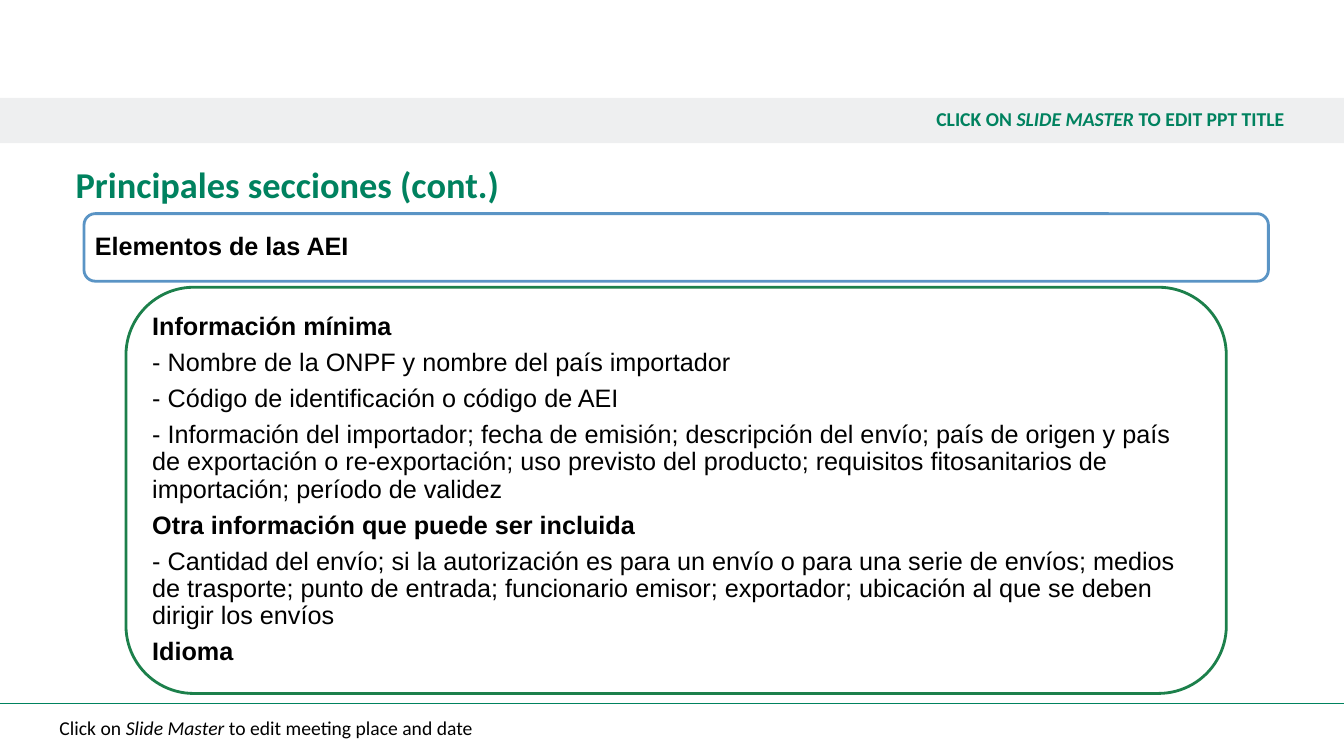
"""Build the slide on the elements of import authorisations."""
from dataclasses import dataclass

from lxml.etree import SubElement
from pptx import Presentation
from pptx.dml.color import RGBColor
from pptx.enum.shapes import MSO_CONNECTOR, MSO_SHAPE
from pptx.enum.text import MSO_ANCHOR, MSO_AUTO_SIZE, PP_ALIGN
from pptx.oxml.ns import qn
from pptx.util import Inches, Pt

COLUMNS, ROWS = 160, 90
CELL = Inches(1) / 12


@dataclass(frozen=True)
class Theme:
    green: str = "00825F"
    frame_green: str = "1C804B"
    frame_blue: str = "5A94C5"
    band: str = "D8D9DC"
    band_alpha: str = "42000"
    white: str = "FFFFFF"
    black: str = "000000"
    heading_font: str = "Calibri"
    body_font: str = "Arial"
    title_size: float = 26
    body_size: float = 18
    small_size: float = 14


@dataclass(frozen=True)
class Area:
    column: float
    row: float
    columns: float
    rows: float

    def lengths(self) -> dict:
        names = ("left", "top", "width", "height")
        cells = (self.column, self.row, self.columns, self.rows)
        return {name: round(count * CELL) for name, count in zip(names, cells)}


@dataclass(frozen=True)
class Span:
    text: str
    bold: bool = False
    italic: bool = False


@dataclass(frozen=True)
class Style:
    font: str
    size: float
    color: str
    inset: tuple
    anchor: MSO_ANCHOR = MSO_ANCHOR.MIDDLE
    align: PP_ALIGN = PP_ALIGN.LEFT
    after: float = 0


@dataclass(frozen=True)
class Frame:
    area: Area
    line: str


THEME = Theme()
STRIP_INSET = (0.59, 0.05)
FOOTER = Style(THEME.heading_font, THEME.small_size, THEME.black, STRIP_INSET)
HEADER = Style(THEME.heading_font, THEME.small_size, THEME.green, STRIP_INSET,
               align=PP_ALIGN.RIGHT)
TITLE = Style(THEME.heading_font, THEME.title_size, THEME.green, (0.17, 0.08),
              anchor=MSO_ANCHOR.TOP)
BODY = Style(THEME.body_font, THEME.body_size, THEME.black, (0.07, 0.07),
             after=0.35 * THEME.body_size)

FRAMES = (
    Frame(Area(10, 25.44, 141, 8.04), THEME.frame_blue),
    Frame(Area(15, 34.2, 131, 48.36), THEME.frame_green),
)
FOOTER_TEXT = [[Span("Click on "), Span("Slide Master ", italic=True),
                Span("to edit meeting place and date")]]
HEADER_TEXT = [[Span("CLICK ON ", True), Span("SLIDE MASTER ", True, True),
                Span("TO EDIT PPT TITLE", True)]]
TITLE_TEXT = [[Span("Principales secciones (cont.)", True)]]
SECTION_TEXT = [[Span("Elementos de las AEI", True)]]
BODY_TEXT = [
    [Span("Información mínima", True)],
    [Span("- Nombre de la ONPF y nombre del país importador")],
    [Span("- Código de identificación o código de AEI")],
    [Span("- Información del importador; fecha de emisión; descripción del envío; "
          "país de origen y país de exportación o re-exportación; uso previsto del "
          "producto; requisitos fitosanitarios de importación; período de validez")],
    [Span("Otra información que puede ser incluida", True)],
    [Span("- Cantidad del envío; si la autorización es para un envío o para una "
          "serie de envíos; medios de trasporte; punto de entrada; funcionario "
          "emisor; exportador; ubicación al que se deben dirigir los envíos")],
    [Span("Idioma", True)],
]


def assign(target, values: dict) -> None:
    for name, value in values.items():
        setattr(target, name, value)


def write(box, paragraphs: list, style: Style) -> None:
    frame = box.text_frame
    across, down = (Inches(inset) for inset in style.inset)
    assign(frame, {"word_wrap": True, "auto_size": MSO_AUTO_SIZE.NONE,
                   "vertical_anchor": style.anchor,
                   "margin_left": across, "margin_right": across,
                   "margin_top": down, "margin_bottom": down})
    for index, spans in enumerate(paragraphs):
        para = frame.add_paragraph() if index else frame.paragraphs[0]
        assign(para, {"alignment": style.align, "line_spacing": 0.9,
                      "space_before": Pt(0), "space_after": Pt(style.after)})
        for span in spans:
            run = para.add_run()
            run.text = span.text
            assign(run.font, {"name": style.font, "size": Pt(style.size),
                              "bold": span.bold, "italic": span.italic})
            run.font.color.rgb = RGBColor.from_string(style.color)


def add_panel(page, kind: MSO_SHAPE, area: Area, fill: str):
    panel = page.shapes.add_shape(kind, **area.lengths())
    panel.shadow.inherit = False
    panel.fill.solid()
    panel.fill.fore_color.rgb = RGBColor.from_string(fill)
    panel.line.fill.background()
    return panel


def add_text(page, area: Area, paragraphs: list, style: Style) -> None:
    write(page.shapes.add_textbox(**area.lengths()), paragraphs, style)


def fill_placeholder(holder, area: Area, paragraphs: list, style: Style) -> None:
    holder.element.getparent().append(holder.element)
    assign(holder, area.lengths())
    write(holder, paragraphs, style)


def remove_bullets(holder) -> None:
    for para in holder.text_frame.paragraphs:
        properties = para._p.get_or_add_pPr()
        properties.set("marL", "0")
        properties.set("indent", "0")
        SubElement(properties, qn("a:buNone"))


def add_rule(page, row: float) -> None:
    height = round(row * CELL)
    rule = page.shapes.add_connector(MSO_CONNECTOR.STRAIGHT, 0, height,
                                     round(COLUMNS * CELL), height)
    rule.line.color.rgb = RGBColor.from_string(THEME.green)
    rule.line.width = Pt(1)
    SubElement(rule.element.spPr, qn("a:effectLst"))


def main() -> None:
    deck = Presentation()
    assign(deck, {"slide_width": round(COLUMNS * CELL),
                  "slide_height": round(ROWS * CELL)})
    page = deck.slides.add_slide(deck.slide_layouts[1])
    title, body = page.shapes.title, page.placeholders[1]

    add_rule(page, 83.76)
    add_text(page, Area(0, 84.72, COLUMNS, 4.2), FOOTER_TEXT, FOOTER)

    band = add_panel(page, MSO_SHAPE.RECTANGLE, Area(0, 11.64, COLUMNS, 5.4), THEME.band)
    color = band.element.spPr.find(qn("a:solidFill")).find(qn("a:srgbClr"))
    SubElement(color, qn("a:alpha"), val=THEME.band_alpha)
    write(band, HEADER_TEXT, HEADER)

    for frame in FRAMES:
        panel = add_panel(page, MSO_SHAPE.ROUNDED_RECTANGLE, frame.area, THEME.white)
        panel.line.color.rgb = RGBColor.from_string(frame.line)
        panel.line.width = Pt(2)

    add_text(page, Area(10.44, 25.8, 140.16, 7.2), SECTION_TEXT, BODY)
    fill_placeholder(body, Area(17.28, 36.48, 126.36, 43.68), BODY_TEXT, BODY)
    remove_bullets(body)
    fill_placeholder(title, Area(6.96, 18.96, 138, 5.04), TITLE_TEXT, TITLE)
    deck.save("out.pptx")


if __name__ == "__main__":
    main()
